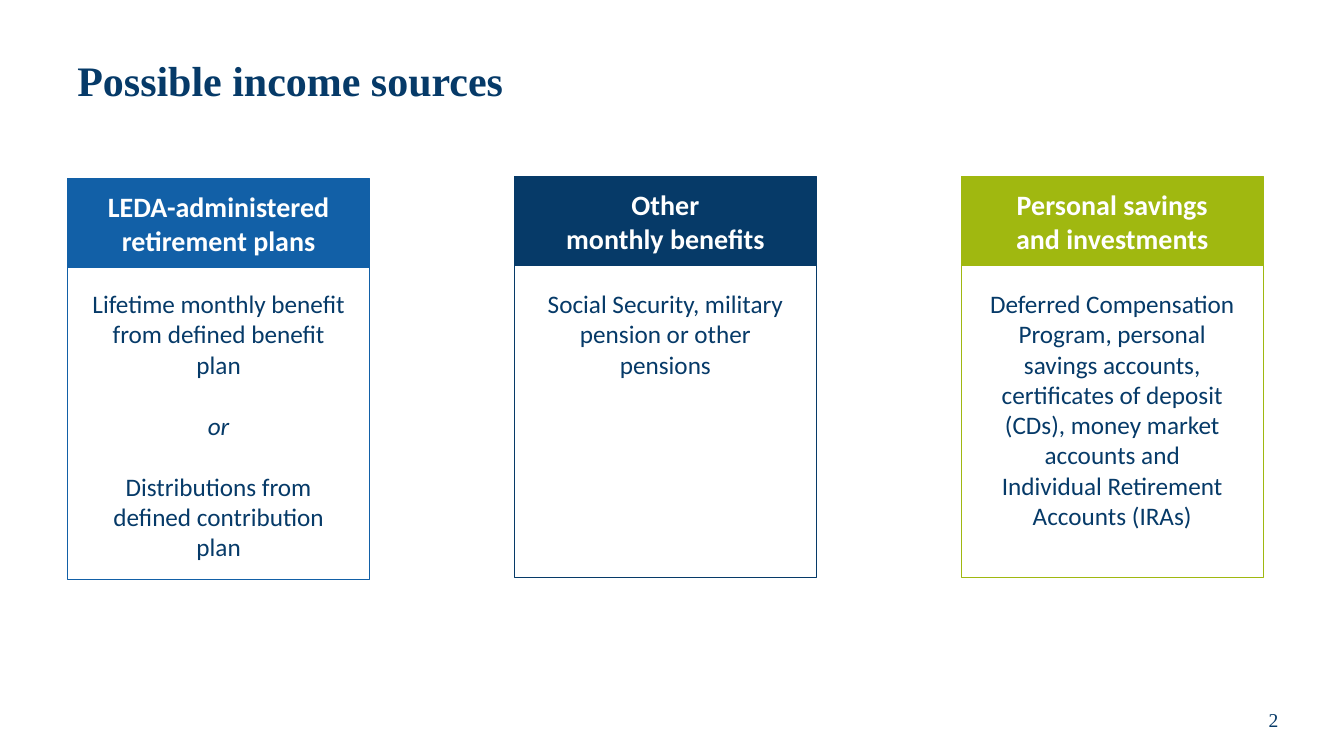
from pptx import Presentation
from pptx.dml.color import RGBColor
from pptx.enum.shapes import MSO_SHAPE
from pptx.enum.text import MSO_ANCHOR as Anchor, PP_ALIGN as Align
from pptx.util import Cm, Pt

NAVY = RGBColor(0x06, 0x3A, 0x68)
BLUE = RGBColor(0x12, 0x60, 0xA7)
GREEN = RGBColor(0xA0, 0xB8, 0x10)
WHITE = RGBColor(0xFF, 0xFF, 0xFF)
SERIF, SANS = "Times New Roman", "Calibri"

CARD_LEFT, CARD_PITCH, CARD_WIDTH = 1.7, 11.26, 7.62
HEADER_HEIGHT, BODY_HEIGHT = 2.24, 7.87
TEXT_TOP, TEXT_MARGIN = 7.02, 0.34

# Header lines, body paragraphs as (text, space before, italic), colour, top
CARDS = [
    (["LEDA-administered", "retirement plans"],
     [("Lifetime monthly benefit from defined benefit plan", 0, False),
      ("or", 22, True),
      ("Distributions from defined contribution plan", 22, False)],
     BLUE, 4.5),
    (["Other", "monthly benefits"],
     [("Social Security, military pension or other pensions", 0, False)],
     NAVY, 4.45),
    (["Personal savings", "and investments"],
     [("Deferred Compensation Program, personal savings accounts, "
       "certificates of deposit (CDs), money market accounts and", 0, False),
      ("Individual Retirement Accounts (IRAs)", 0, False)],
     GREEN, 4.45),
]


def add_run(paragraph, text, font, size, color, bold=False, italic=False):
    run = paragraph.add_run()
    run.text = text
    run.font.name = font
    run.font.size = Pt(size)
    run.font.color.rgb = color
    run.font.bold = bold
    run.font.italic = italic


def add_text_box(slide, left, top, width, height, anchor):
    shape = slide.shapes.add_textbox(Cm(left), Cm(top), Cm(width), Cm(height))
    frame = shape.text_frame
    frame.word_wrap = True
    frame.vertical_anchor = anchor
    return frame


def add_panel(slide, left, top, width, height, color, filled):
    shape = slide.shapes.add_shape(
        MSO_SHAPE.RECTANGLE, Cm(left), Cm(top), Cm(width), Cm(height))
    shape.shadow.inherit = False
    if filled:
        shape.fill.solid()
        shape.fill.fore_color.rgb = color
    else:
        shape.fill.background()
    shape.line.color.rgb = color
    shape.line.width = Pt(0.75)
    return shape


def add_title(slide, left, top, width, height):
    frame = add_text_box(slide, left, top, width, height, Anchor.MIDDLE)
    paragraph = frame.paragraphs[0]
    paragraph.line_spacing = 0.9
    add_run(paragraph, "Possible income sources", SERIF, 30, NAVY, bold=True)


def add_page_number(slide, left, top, width, height):
    frame = add_text_box(slide, left, top, width, height, Anchor.MIDDLE)
    paragraph = frame.paragraphs[0]
    paragraph.alignment = Align.CENTER
    add_run(paragraph, "2", SERIF, 14, NAVY)


def add_card(slide, left, top, width, header_lines, body, color):
    # Outlined body
    body_top = top + HEADER_HEIGHT
    add_panel(slide, left, body_top, width, BODY_HEIGHT, color, filled=False)
    frame = add_text_box(slide, left + TEXT_MARGIN, TEXT_TOP,
                         width - 2 * TEXT_MARGIN,
                         body_top + BODY_HEIGHT - TEXT_TOP, Anchor.TOP)
    frame.margin_top = frame.margin_bottom = Cm(0.25)
    for index, (text, space_before, italic) in enumerate(body):
        paragraph = frame.add_paragraph() if index else frame.paragraphs[0]
        paragraph.alignment = Align.CENTER
        if space_before:
            paragraph.space_before = Pt(space_before)
        add_run(paragraph, text, SANS, 18, NAVY, italic=italic)

    # Filled header
    header = add_panel(slide, left, top, width, HEADER_HEIGHT, color, filled=True)
    frame = header.text_frame
    frame.word_wrap = True
    frame.vertical_anchor = Anchor.MIDDLE
    frame.margin_top = frame.margin_bottom = Cm(0.25)
    paragraph = frame.paragraphs[0]
    paragraph.alignment = Align.CENTER
    for index, line in enumerate(header_lines):
        if index:
            paragraph.add_line_break()
        add_run(paragraph, line, SANS, 20, WHITE, bold=True)


def main():
    presentation = Presentation()
    presentation.slide_width, presentation.slide_height = Cm(33.87), Cm(19.05)
    slide = presentation.slides.add_slide(presentation.slide_layouts[6])
    add_title(slide, 1.7, 0.64, 30.48, 2.92)
    for index, (header_lines, body, color, top) in enumerate(CARDS):
        left = CARD_LEFT + index * CARD_PITCH
        add_card(slide, left, top, CARD_WIDTH, header_lines, body, color)
    add_page_number(slide, 30.61, 17.5, 2.97, 1.27)
    presentation.save("out.pptx")


if __name__ == "__main__":
    main()
